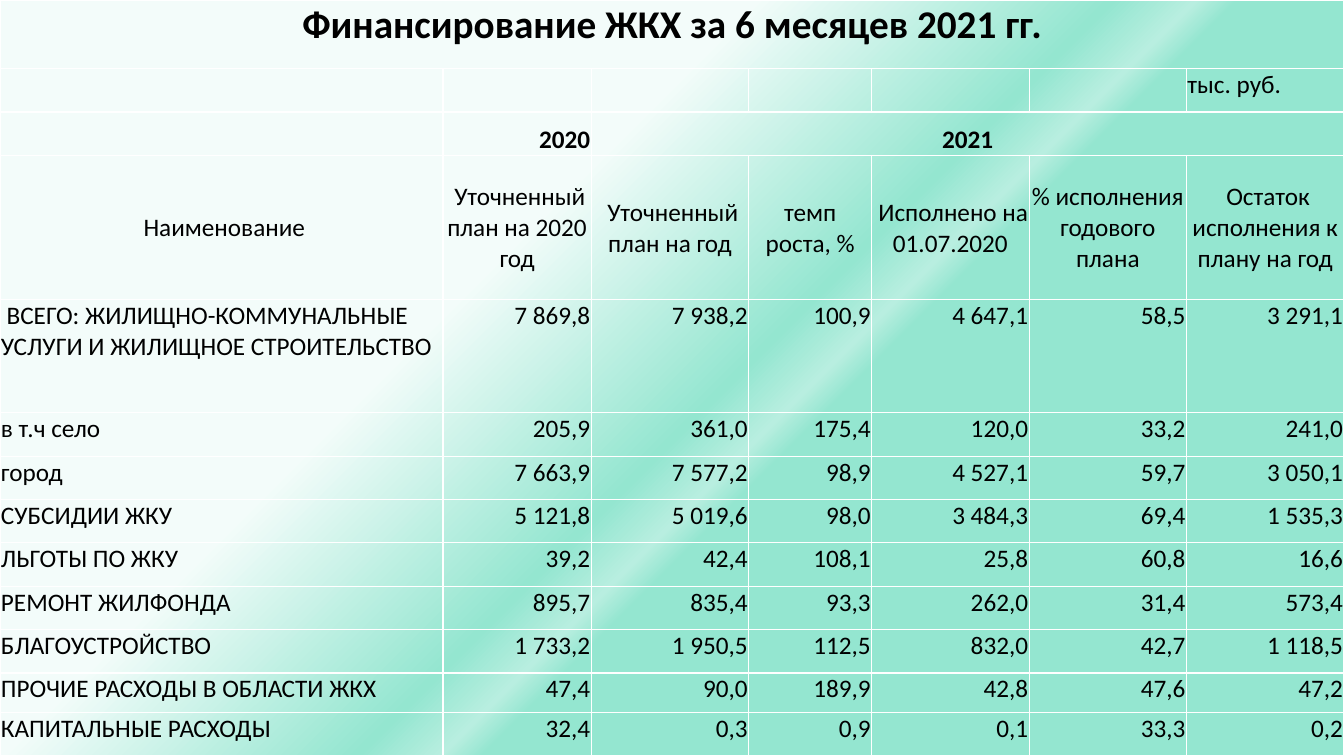
from dataclasses import dataclass

from lxml.etree import SubElement
from pptx import Presentation
from pptx.dml.color import RGBColor as Rgb
from pptx.enum.text import MSO_ANCHOR as Anchor, PP_ALIGN as Align
from pptx.oxml.ns import qn
from pptx.util import Inches, Pt


@dataclass(frozen=True)
class Theme:
    font: str = "Calibri"
    ink: str = "000000"
    grid: str = "FFFFFF"
    grid_width: float = 1
    title_size: float = 28
    body_size: float = 18
    backdrop: tuple = ((36, "F3FCFA"), (53, "94E6D0"), (57, "B8EEE0"), (59, "94E6D0"))
    backdrop_angle: int = 45


THEME = Theme()
SLIDE_SIZE = (Inches(13.33), Inches(7.5))
COLUMNS = (4.39, 1.47, 1.56, 1.22, 1.56, 1.56, 1.56)
ROWS = (0.68, 0.43, 0.43, 1.43, 1.12, *[0.43] * 6, 0.39, 0.43)
CELL = dict(margin_left=Inches(0.01), margin_right=Inches(0.01), margin_top=Inches(0.01), margin_bottom=0)

TITLE = "Финансирование ЖКХ за 6 месяцев 2021 гг."
UNIT = "тыс. руб."
HEADINGS = (
    " Наименование",
    " Уточненный план на 2020 год",
    " Уточненный план на год",
    "темп роста, %",
    " Исполнено на 01.07.2020",
    "% исполнения годового плана",
    " Остаток исполнения к плану на год",
)
EXPENSES = (
    (" ВСЕГО: ЖИЛИЩНО-КОММУНАЛЬНЫЕ УСЛУГИ И ЖИЛИЩНОЕ СТРОИТЕЛЬСТВО",
     "7 869,8", "7 938,2", "100,9", "4 647,1", "58,5", "3 291,1"),
    ("в т.ч село", "205,9", "361,0", "175,4", "120,0", "33,2", "241,0"),
    ("город", "7 663,9", "7 577,2", "98,9", "4 527,1", "59,7", "3 050,1"),
    ("СУБСИДИИ ЖКУ", "5 121,8", "5 019,6", "98,0", "3 484,3", "69,4", "1 535,3"),
    ("ЛЬГОТЫ ПО ЖКУ", "39,2", "42,4", "108,1", "25,8", "60,8", "16,6"),
    ("РЕМОНТ ЖИЛФОНДА", "895,7", "835,4", "93,3", "262,0", "31,4", "573,4"),
    ("БЛАГОУСТРОЙСТВО", "1 733,2", "1 950,5", "112,5", "832,0", "42,7", "1 118,5"),
    ("ПРОЧИЕ РАСХОДЫ В ОБЛАСТИ ЖКХ", "47,4", "90,0", "189,9", "42,8", "47,6", "47,2"),
    ("КАПИТАЛЬНЫЕ РАСХОДЫ", "32,4", "0,3", "0,9", "0,1", "33,3", "0,2"),
)


def apply(target, values):
    for name, value in values.items():
        setattr(target, name, value)


def paint_backdrop(slide):
    fill = slide.background.fill
    fill.gradient()
    fill.gradient_angle = 360 - THEME.backdrop_angle
    stops = next(slide.background._cSld.iter(qn("a:gsLst")))
    for stop in list(stops):
        stops.remove(stop)
    for share, color in THEME.backdrop:
        stop = SubElement(stops, qn("a:gs"), pos=str(share * 1000))
        SubElement(stop, qn("a:srgbClr"), val=color)


def rule_cell(cell):
    properties = cell._tc.get_or_add_tcPr()
    for side in ("lnL", "lnR", "lnT", "lnB"):
        edge = SubElement(properties, qn(f"a:{side}"), w=str(Pt(THEME.grid_width)))
        SubElement(SubElement(edge, qn("a:solidFill")), qn("a:srgbClr"), val=THEME.grid)
    cell.fill.background()


def write_cell(cell, wording, align=Align.LEFT, anchor=Anchor.TOP, size=THEME.body_size, bold=False):
    cell.vertical_anchor = anchor
    paragraph = cell.text_frame.paragraphs[0]
    paragraph.alignment = align
    run = paragraph.add_run()
    run.text = wording
    apply(run.font, dict(name=THEME.font, size=Pt(size), bold=bold))
    run.font.color.rgb = Rgb.from_string(THEME.ink)


def write_header(table):
    last = len(COLUMNS) - 1
    table.cell(0, 0).merge(table.cell(0, last))
    table.cell(2, 2).merge(table.cell(2, last))
    write_cell(table.cell(0, 0), TITLE, Align.CENTER, size=THEME.title_size, bold=True)
    write_cell(table.cell(1, last), UNIT)
    write_cell(table.cell(2, 1), "2020", Align.RIGHT, Anchor.BOTTOM, bold=True)
    write_cell(table.cell(2, 2), "2021", Align.CENTER, Anchor.BOTTOM, bold=True)
    for column, heading in enumerate(HEADINGS):
        write_cell(table.cell(3, column), heading, Align.CENTER, Anchor.MIDDLE)


def write_expenses(table, first_row):
    for row, expense in enumerate(EXPENSES, first_row):
        for column, wording in enumerate(expense):
            write_cell(table.cell(row, column), wording, Align.RIGHT if column else Align.LEFT)


def add_financing(slide, left, top, width, height):
    table = slide.shapes.add_table(len(ROWS), len(COLUMNS), left, top, width, height).table
    apply(table, dict(first_row=False, horz_banding=False))
    for column, share in zip(table.columns, COLUMNS):
        column.width = int(width * share / sum(COLUMNS))
    for row, share in zip(table.rows, ROWS):
        row.height = int(height * share / sum(ROWS))
    for cell in table.iter_cells():
        apply(cell, CELL)
        rule_cell(cell)
        cell.text_frame.paragraphs[0].font.size = Pt(THEME.body_size)
    write_header(table)
    write_expenses(table, len(ROWS) - len(EXPENSES))


def main():
    deck = Presentation()
    deck.slide_width, deck.slide_height = SLIDE_SIZE
    slide = deck.slides.add_slide(deck.slide_layouts[6])
    paint_backdrop(slide)
    add_financing(slide, 0, 0, *SLIDE_SIZE)
    deck.save("out.pptx")


if __name__ == "__main__":
    main()
